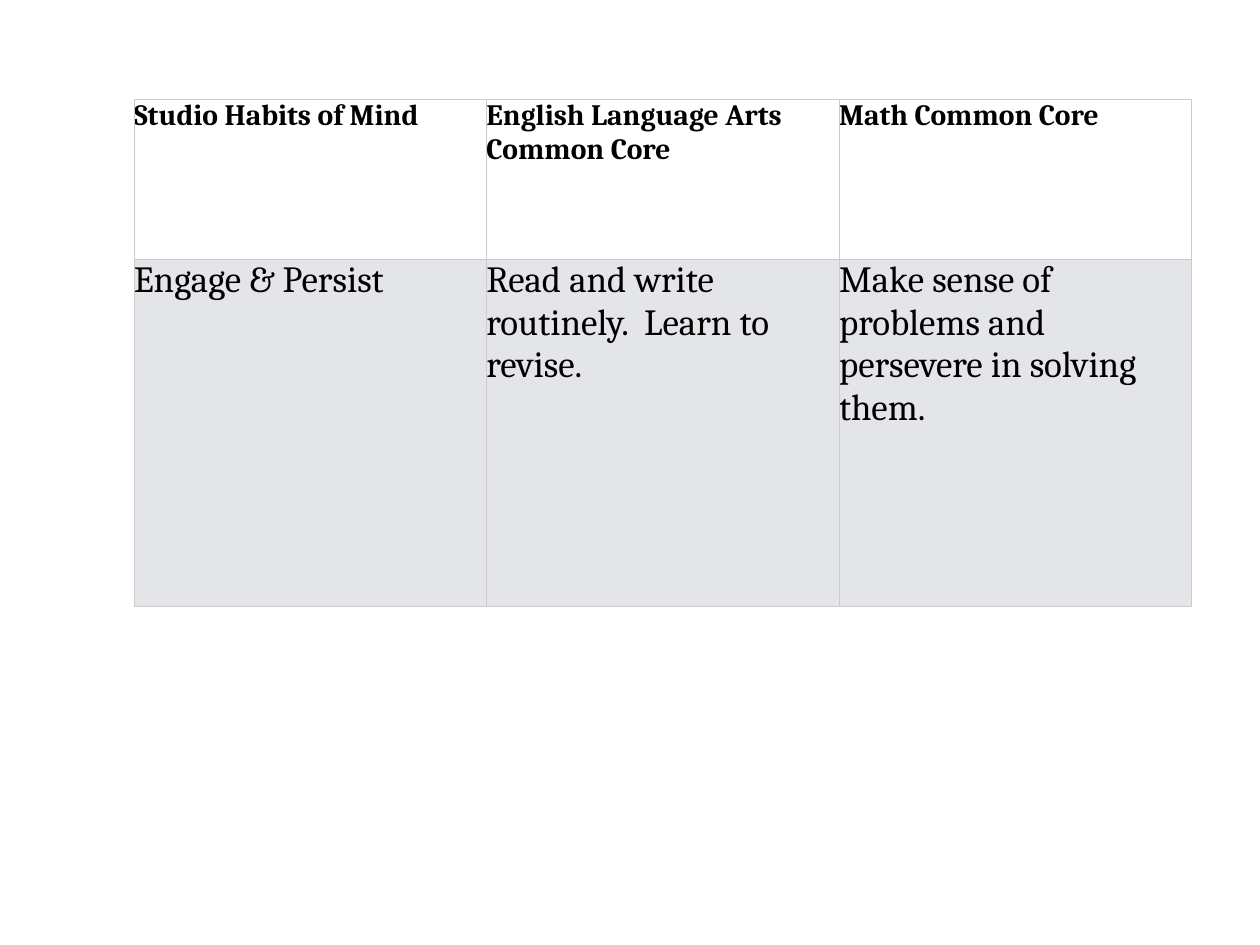
"""Build a slide with a table that links studio habits to the Common Core."""
from lxml.etree import SubElement as Sub
from pptx import Presentation
from pptx.dml.color import RGBColor as Rgb
from pptx.oxml.ns import qn
from pptx.util import Inches as In, Pt

HUES = {"text": "000000", "head": "FFFFFF", "body": "E3E5E8", "line": "CBCBCB"}
FONT = "Cambria"
WIDE, HIGH = 14.22, 10.67
LEFT, TOP, COL = 1.51, 1.12, 3.98
ROWS = [
    ("head", 1.81, 24, ["Studio Habits of Mind",
                        "English Language Arts Common Core",
                        "Math Common Core"]),
    ("body", 3.92, 30, ["Engage & Persist",
                        "Read and write routinely.  Learn to revise.",
                        "Make sense of problems and persevere in solving them."]),
]

deck = Presentation()
deck.slide_width, deck.slide_height = In(WIDE), In(HIGH)
slide = deck.slides.add_slide(deck.slide_layouts[6])

count = len(ROWS[0][3])
tall = sum(row[1] for row in ROWS)
frame = slide.shapes.add_table(len(ROWS), count, In(LEFT), In(TOP),
                               In(COL * count), In(tall))
table = frame.table
table.horz_banding = False
for col in table.columns:
    col.width = In(COL)

for r, (kind, high, size, texts) in enumerate(ROWS):
    table.rows[r].height = In(high)
    for c, text in enumerate(texts):
        cell = table.cell(r, c)
        cell.margin_left = cell.margin_right = 0
        cell.margin_top = cell.margin_bottom = 0
        props = cell._tc.get_or_add_tcPr()
        for side in ("lnL", "lnR", "lnT", "lnB"):
            edge = Sub(props, qn("a:" + side), w=str(Pt(0.5)))
            Sub(Sub(edge, qn("a:solidFill")), qn("a:srgbClr"), val=HUES["line"])
        cell.fill.solid()
        cell.fill.fore_color.rgb = Rgb.from_string(HUES[kind])
        cell.text_frame.text = text
        font = cell.text_frame.paragraphs[0].runs[0].font
        font.name, font.size, font.bold = FONT, Pt(size), kind == "head"
        font.color.rgb = Rgb.from_string(HUES["text"])

deck.save("out.pptx")
